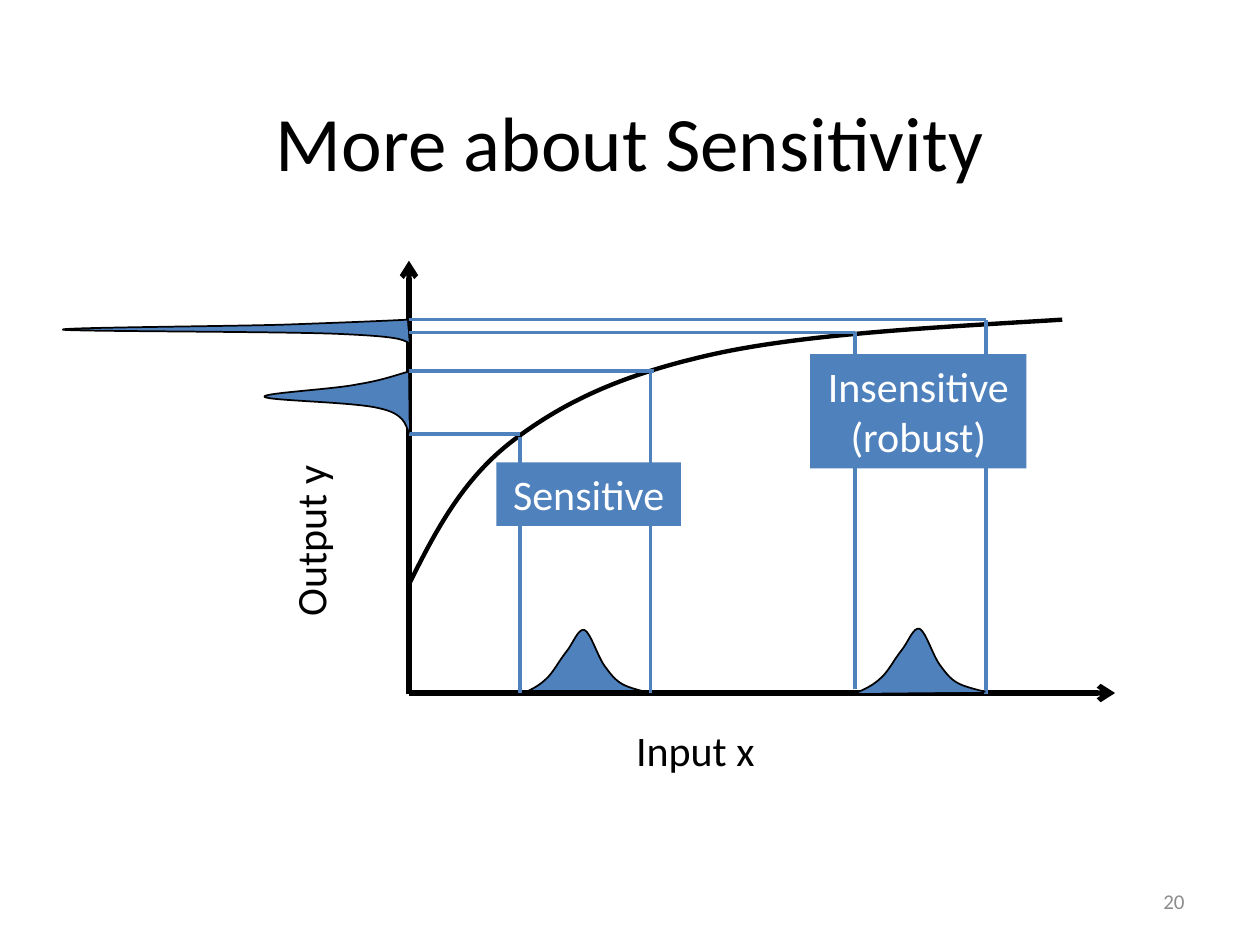
"""Build a slide showing how input spread maps to output spread on a response curve."""
from lxml import etree
from pptx import Presentation
from pptx.dml.color import RGBColor
from pptx.enum.shapes import MSO_CONNECTOR, MSO_SHAPE
from pptx.enum.text import MSO_ANCHOR, PP_ALIGN
from pptx.oxml.ns import qn
from pptx.util import Pt

BLACK = RGBColor(0, 0, 0)
WHITE = RGBColor(255, 255, 255)
BLUE = RGBColor(0x4F, 0x81, 0xBD)
GRAY = RGBColor(0x8C, 0x8C, 0x8C)
AXIS_X, AXIS_Y = 233.7, 396


def add_curve(points, width, fill=None):
    """Draw a chain of cubic curves given as a start and triples of points."""
    points = [(Pt(x), Pt(y)) for x, y in points]
    builder = shapes.build_freeform(*points[0])
    builder.add_line_segments(points[3::3], close=False)
    shape = builder.convert_to_shape()
    for index, segment in enumerate(list(shape._element.iter(qn("a:lnTo")))):
        curve = etree.Element(qn("a:cubicBezTo"))
        for x, y in points[3 * index + 1:3 * index + 4]:
            etree.SubElement(curve, qn("a:pt"), x=str(x - shape.left), y=str(y - shape.top))
        segment.getparent().replace(segment, curve)
    shape.shadow.inherit = False
    shape.line.color.rgb = BLACK
    shape.line.width = Pt(width)
    if fill is None:
        shape.fill.background()
    else:
        shape.fill.solid()
        shape.fill.fore_color.rgb = fill


def set_text(shape, text, size, color, alignment, anchor=MSO_ANCHOR.TOP):
    """Fill a shape with text in one uniform format."""
    frame = shape.text_frame
    frame.word_wrap = True
    frame.vertical_anchor = anchor
    frame.text = text
    for paragraph in frame.paragraphs:
        paragraph.alignment = alignment
        paragraph.font.name = "Calibri"
        paragraph.font.size = Pt(size)
        paragraph.font.color.rgb = color


presentation = Presentation()
presentation.slide_width, presentation.slide_height = Pt(720), Pt(540)
slide = presentation.slides.add_slide(presentation.slide_layouts[5])
shapes = slide.shapes

title = shapes.title
title.left, title.top, title.width, title.height = Pt(36), Pt(35.3), Pt(648), Pt(90)
set_text(title, "More about Sensitivity", 44, BLACK, PP_ALIGN.CENTER, MSO_ANCHOR.MIDDLE)

input_bell = [
    (0, 0), (5, -2), (10, -4.3), (14.4, -8.5), (18.7, -12.2), (22.3, -19.4), (26, -24),
    (30.2, -29), (33, -38), (36.7, -36.7), (40.3, -35), (44.6, -20), (49, -15),
    (52.6, -10), (55.4, -7), (59.8, -5), (64, -3), (74.2, -0.7), (74.2, -0.7)]
response = [
    (AXIS_X, 334), (249, 303), (265, 273), (293.8, 251.3), (323.3, 229),
    (356.4, 213.8), (408.2, 202.3), (460.8, 190.8), (533.5, 187.2), (607, 182.7)]
wide_output_bell = [
    (233.3, 212.4), (225.4, 214.6), (218.2, 217.4), (204.5, 219.6), (190.8, 222.5),
    (149, 224.6), (151.2, 226.8), (153.4, 229), (203, 229.7), (216.7, 233.3),
    (230.4, 236.2), (231.8, 241.9), (AXIS_X, 247.7)]
narrow_output_bell = [
    (232.6, 182.7), (214.6, 183.6), (196.6, 184.3), (163.4, 185.5), (131, 186.5),
    (31, 187.2), (36, 188.4), (41, 189.4), (159.8, 189.4), (193, 190.8),
    (226, 192.2), (229.7, 193.7), (AXIS_X, 196)]

add_curve([(297.4 + x, 396.7 + y) for x, y in input_bell], 1, BLUE)
add_curve(response, 2.5)

axes = [(AXIS_X, AXIS_Y, 637.2, AXIS_Y), (AXIS_X, 396.7, AXIS_X, 149)]
guides = [
    (297.2, AXIS_Y, 297.2, 249.8), (371.7, AXIS_Y, 371.7, 212.4),
    (AXIS_X, 248, 297.2, 248), (AXIS_X, 212, 373.7, 212),
    (488.7, 394, 488.7, 190), (563.4, 396.7, 563.4, 182.7),
    (AXIS_X, 190, 488.7, 190), (AXIS_X, 182.7, 563.6, 182.7)]
for ends in axes + guides:
    is_axis = ends in axes
    connector = shapes.add_connector(MSO_CONNECTOR.STRAIGHT, *map(Pt, ends))
    connector.line.color.rgb = BLACK if is_axis else BLUE
    connector.line.width = Pt(3 if is_axis else 2)
    if is_axis:
        etree.SubElement(connector.line._get_or_add_ln(), qn("a:tailEnd"), type="arrow")
    etree.SubElement(connector._element.spPr, qn("a:effectLst"))

add_curve(wide_output_bell, 1, BLUE)
add_curve(narrow_output_bell, 1, BLUE)
add_curve([(488.9 + x, AXIS_Y + y) for x, y in input_bell], 1, BLUE)

input_label = shapes.add_textbox(Pt(356.4), Pt(410.4), Pt(128), Pt(36))
set_text(input_label, "Input x", 24, BLACK, PP_ALIGN.LEFT)
output_label = shapes.add_textbox(Pt(159), Pt(246.2), Pt(44), Pt(113))
set_text(output_label, "Output y", 24, BLACK, PP_ALIGN.LEFT)
output_label.text_frame._txBody.bodyPr.set("vert", "vert270")
number = shapes.add_textbox(Pt(516), Pt(500.5), Pt(168), Pt(28.8))
set_text(number, "20", 12, GRAY, PP_ALIGN.RIGHT, MSO_ANCHOR.MIDDLE)

for text, box in (("Sensitive", (283.7, 264.2, 105.4, 36.3)),
                  ("Insensitive\n(robust)", (463, 202.3, 123.6, 65.4))):
    region = shapes.add_shape(MSO_SHAPE.RECTANGLE, *map(Pt, box))
    region.shadow.inherit = False
    region.fill.solid()
    region.fill.fore_color.rgb = BLUE
    region.line.fill.background()
    set_text(region, text, 24, WHITE, PP_ALIGN.CENTER)

presentation.save("out.pptx")
